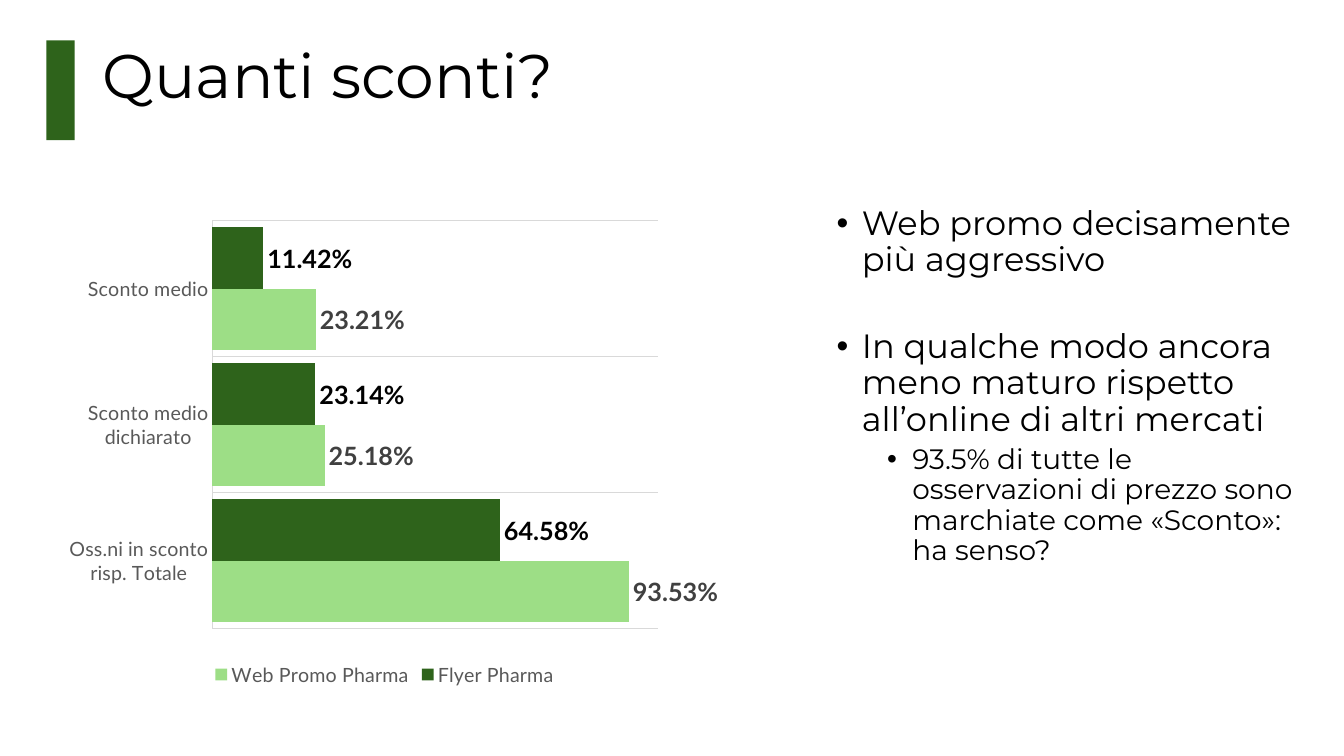
from dataclasses import dataclass

from lxml.etree import SubElement
from pptx import Presentation
from pptx.chart.data import CategoryChartData
from pptx.dml.color import RGBColor
from pptx.enum.chart import XL_CHART_TYPE, XL_LABEL_POSITION, XL_LEGEND_POSITION
from pptx.enum.chart import XL_TICK_MARK
from pptx.enum.shapes import MSO_SHAPE
from pptx.oxml import parse_xml
from pptx.oxml.ns import nsdecls, qn
from pptx.slide import Slide
from pptx.util import Inches, Pt

WIDE, HIGH = Inches(13.33), Inches(7.5)


@dataclass(frozen=True)
class Theme:
    dark: str = "2E631B"
    light: str = "9DDE86"
    ink: str = "000000"
    soft: str = "404040"
    gray: str = "595959"
    rule: str = "D9D9D9"
    head: int = 44
    body: int = 24
    sub: int = 20
    label: int = 18
    axis: int = 14
    font: str = "Montserrat"
    data: str = "Lato"


@dataclass(frozen=True)
class Box:
    """Left, top, width and height as percent of the slide."""
    left: float
    top: float
    width: float
    height: float

    def place(self) -> tuple[int, int, int, int]:
        return (int(WIDE * self.left / 100), int(HIGH * self.top / 100),
                int(WIDE * self.width / 100), int(HIGH * self.height / 100))


@dataclass(frozen=True)
class Line:
    text: str
    size: int
    level: int = 0
    inset: float = 0
    before: int = 0


@dataclass(frozen=True)
class Group:
    name: str
    values: tuple[float, ...]
    fill: str
    ink: str


THEME = Theme()
BAR = Box(3.45, 5.33, 2.1, 13.2)
TITLE = Box(6.9, 5.33, 86.27, 19.33)
CHART = Box(3.6, 26.67, 50.04, 64.67)
BODY = Box(61.52, 26.67, 35.78, 63.47)
PLOT = {"x": 0.244, "y": 0.039, "w": 0.662, "h": 0.835}

HEAD = [Line("Quanti sconti?", THEME.head)]
POINTS = [
    Line("Web promo decisamente più aggressivo", THEME.body, inset=0.25),
    Line("In qualche modo ancora meno maturo rispetto all’online di altri mercati",
         THEME.body, inset=0.25, before=36),
    Line("93.5% di tutte le osservazioni di prezzo sono marchiate come «Sconto»: ha senso?",
         THEME.sub, level=1, inset=0.75, before=5),
]
NAMES = ["Sconto medio", "Sconto medio\ndichiarato", "Oss.ni in sconto\nrisp. Totale"]
GROUPS = [
    Group("Flyer Pharma", (0.1142, 0.2314, 0.6458), THEME.dark, THEME.ink),
    Group("Web Promo Pharma", (0.2321, 0.2518, 0.9353), THEME.light, THEME.soft),
]


def style(font, *, size: int, ink: str, face: str, bold: bool = False) -> None:
    font.size, font.name, font.bold = Pt(size), face, bold
    font.color.rgb = RGBColor.from_string(ink)


def write(slide: Slide, box: Box, lines: list[Line], *,
          ink: str = THEME.ink, face: str = THEME.font) -> None:
    frame = slide.shapes.add_textbox(*box.place()).text_frame
    frame.word_wrap = True
    for place, line in enumerate(lines):
        para = frame.add_paragraph() if place else frame.paragraphs[0]
        para.level = line.level
        if line.inset:
            props = para._p.get_or_add_pPr()
            props.set("marL", str(Inches(line.inset)))
            props.set("indent", str(-Inches(0.25)))
            SubElement(props, qn("a:buFont"), typeface="Arial")
            SubElement(props, qn("a:buChar"), char="•")
        para.line_spacing = 0.9
        if line.before:
            para.space_before = Pt(line.before)
        run = para.add_run()
        run.text = line.text
        style(run.font, size=line.size, ink=ink, face=face)


def block(slide: Slide, box: Box, fill: str) -> None:
    shape = slide.shapes.add_shape(MSO_SHAPE.RECTANGLE, *box.place())
    shape.shadow.inherit = False
    shape.fill.solid()
    shape.fill.fore_color.rgb = RGBColor.from_string(fill)
    shape.line.fill.background()


def rule(line) -> None:
    line.width = Pt(0.75)
    line.color.rgb = RGBColor.from_string(THEME.rule)


def fix_plot(chart) -> None:
    area = chart._chartSpace.chart.plotArea
    for old in area.findall(qn("c:layout")):
        area.remove(old)
    modes = "".join(f'<c:{key}Mode val="edge"/>' for key in "xy")
    sides = "".join(f'<c:{key} val="{share}"/>' for key, share in PLOT.items())
    area.insert(0, parse_xml(
        f'<c:layout {nsdecls("c")}><c:manualLayout><c:layoutTarget val="inner"/>'
        f'{modes}{sides}</c:manualLayout></c:layout>'))


def graph(slide: Slide, box: Box, names: list[str], groups: list[Group]) -> None:
    data = CategoryChartData(number_format="0.00%")
    data.categories = names
    for group in groups:
        data.add_series(group.name, group.values)
    chart = slide.shapes.add_chart(
        XL_CHART_TYPE.BAR_CLUSTERED, *box.place(), data).chart
    style(chart.font, size=THEME.axis, ink=THEME.gray, face=THEME.data)
    chart.has_title = False
    chart.has_legend = True
    chart.legend.position = XL_LEGEND_POSITION.BOTTOM
    chart.legend.include_in_layout = False
    style(chart.legend.font, size=THEME.axis, ink=THEME.gray, face=THEME.data)

    side = chart.category_axis
    side.reverse_order = True
    side.major_tick_mark = side.minor_tick_mark = XL_TICK_MARK.NONE
    side.has_major_gridlines = True
    rule(side.format.line)
    rule(side.major_gridlines.format.line)
    style(side.tick_labels.font, size=THEME.axis, ink=THEME.gray, face=THEME.data)

    scale = chart.value_axis
    scale.minimum_scale, scale.maximum_scale = 0, 1
    scale.has_major_gridlines = False
    scale.visible = False

    plot = chart.plots[0]
    plot.gap_width, plot.overlap, plot.vary_by_categories = 22, 0, False
    for group, bars in zip(groups, plot.series):
        bars.format.fill.solid()
        bars.format.fill.fore_color.rgb = RGBColor.from_string(group.fill)
        tags = bars.data_labels
        tags.show_value = True
        tags.position = XL_LABEL_POSITION.OUTSIDE_END
        tags.number_format, tags.number_format_is_linked = "0.00%", False
        style(tags.font, size=THEME.label, ink=group.ink, face=THEME.data, bold=True)
    fix_plot(chart)


def main() -> None:
    deck = Presentation()
    deck.slide_width, deck.slide_height = WIDE, HIGH
    slide = deck.slides.add_slide(deck.slide_layouts[6])
    block(slide, BAR, THEME.dark)
    write(slide, TITLE, HEAD)
    write(slide, BODY, POINTS)
    graph(slide, CHART, NAMES, GROUPS)
    deck.save("out.pptx")


if __name__ == "__main__":
    main()
